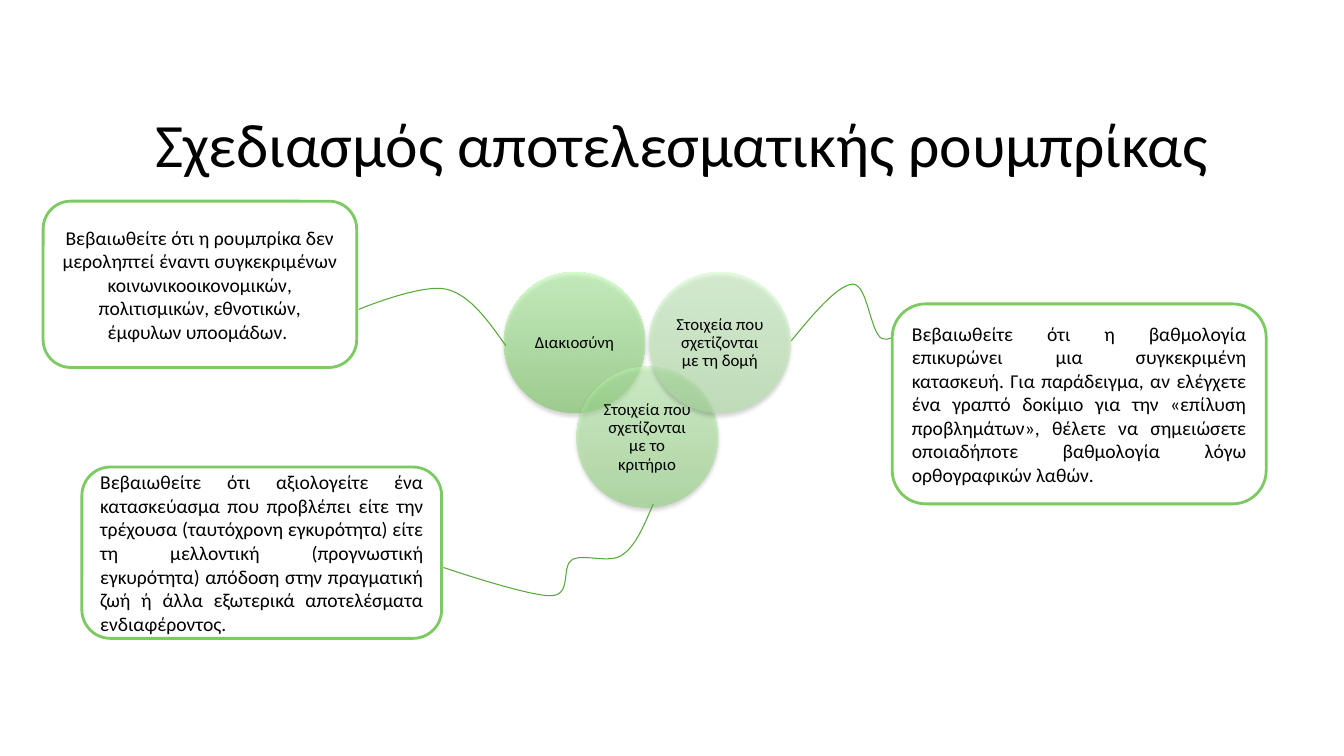
"""Build the slide on designing an effective rubric."""
from dataclasses import dataclass

from lxml.etree import SubElement
from pptx import Presentation
from pptx.dml.color import RGBColor
from pptx.enum.shapes import MSO_SHAPE
from pptx.enum.text import MSO_ANCHOR, MSO_AUTO_SIZE, PP_ALIGN
from pptx.oxml.ns import qn
from pptx.shapes.autoshape import Shape
from pptx.shapes.shapetree import GroupShapes
from pptx.slide import Slide
from pptx.util import Pt

BLACK = RGBColor(0x00, 0x00, 0x00)
WHITE = RGBColor(0xFF, 0xFF, 0xFF)
BORDER = RGBColor(0x7C, 0xCA, 0x62)
CURVE = RGBColor(0x55, 0xA8, 0x39)
FONT = "Calibri"
DIAMETER = 100.8
LABEL_SIZE = 71.3
LABEL_OFFSET = (DIAMETER - LABEL_SIZE) / 2

Point = tuple[float, float]


@dataclass(frozen=True)
class Circle:
    """A translucent circle with its gradient colours."""

    left: float
    top: float
    bottom_color: RGBColor
    top_color: RGBColor
    text: str


@dataclass(frozen=True)
class Note:
    """A rounded box with an explanation."""

    left: float
    top: float
    width: float
    height: float
    align: PP_ALIGN
    text: str


CIRCLES = [
    Circle(360, 194.4, RGBColor(0x69, 0xC5, 0x4B), RGBColor(0xB4, 0xFF, 0xA4),
           "Διακιοσύνη"),
    Circle(411.9, 262, RGBColor(0x8A, 0xD5, 0x75), RGBColor(0xC2, 0xFF, 0xB4),
           "Στοιχεία που σχετίζονται με το κριτήριο"),
    Circle(463.8, 194.4, RGBColor(0xAD, 0xE4, 0xA0), RGBColor(0xD2, 0xFF, 0xC9),
           "Στοιχεία που σχετίζονται με τη δομή"),
]

NOTES = [
    Note(30.8, 143.7, 224, 118.8, PP_ALIGN.CENTER,
         "Βεβαιωθείτε ότι η ρουμπρίκα δεν μεροληπτεί έναντι συγκεκριμένων "
         "κοινωνικοοικονομικών, πολιτισμικών, εθνοτικών, έμφυλων υποομάδων. "),
    Note(58.5, 333.6, 257, 122.4, PP_ALIGN.JUSTIFY,
         "Βεβαιωθείτε ότι αξιολογείτε ένα κατασκεύασμα που προβλέπει είτε την "
         "τρέχουσα (ταυτόχρονη εγκυρότητα) είτε τη μελλοντική (προγνωστική "
         "εγκυρότητα) απόδοση στην πραγματική ζωή ή άλλα εξωτερικά "
         "αποτελέσματα ενδιαφέροντος. "),
    Note(637.3, 217.1, 267.1, 142.8, PP_ALIGN.JUSTIFY,
         "Βεβαιωθείτε ότι η βαθμολογία επικυρώνει μια συγκεκριμένη κατασκευή. "
         "Για παράδειγμα, αν ελέγχετε ένα γραπτό δοκίμιο για την «επίλυση "
         "προβλημάτων», θέλετε να σημειώσετε οποιαδήποτε βαθμολογία λόγω "
         "ορθογραφικών λαθών. "),
]

CURVES: list[list[Point]] = [
    [(565.2, 243.4), (581.8, 223.2), (598.3, 203.8), (609.1, 203),
     (619.9, 203), (621.4, 237.6), (630, 241.9),
     (638.6, 245.5), (651.6, 227.5), (659.5, 228.2),
     (668.2, 229), (681.1, 247), (681.1, 247)],
    [(361.4, 247), (348.5, 229), (336.2, 211), (319, 206.6),
     (301, 202.3), (256.3, 221), (256.3, 221)],
    [(466.6, 360), (460.1, 375.1), (454.3, 389.5), (445, 396),
     (435.6, 403.2), (417.6, 395.3), (409, 399.6),
     (400.3, 404.6), (409, 424.8), (393.8, 425.5),
     (378, 426.2), (316.8, 405.4), (316.8, 405.4)],
]


def write(s: Shape, text: str, size: float, align: PP_ALIGN,
          spacing: float = 1.0, inset: Point = (7.2, 3.6)) -> None:
    """Put one formatted paragraph in a shape."""
    tf = s.text_frame
    frame = {"word_wrap": True, "auto_size": MSO_AUTO_SIZE.NONE,
             "vertical_anchor": MSO_ANCHOR.MIDDLE,
             "margin_left": Pt(inset[0]), "margin_right": Pt(inset[0]),
             "margin_top": Pt(inset[1]), "margin_bottom": Pt(inset[1])}
    for name, value in frame.items():
        setattr(tf, name, value)
    p = tf.paragraphs[0]
    for name, value in {"alignment": align, "line_spacing": spacing}.items():
        setattr(p, name, value)
    r = p.add_run()
    r.text = text
    for name, value in {"name": FONT, "size": Pt(size)}.items():
        setattr(r.font, name, value)
    r.font.color.rgb = BLACK


def add_title(slide: Slide, text: str) -> None:
    """Place and fill the title placeholder."""
    s = slide.shapes.title
    box = {"left": 73.4, "top": 56.9, "width": 828, "height": 97.2}
    for name, value in box.items():
        setattr(s, name, Pt(value))
    write(s, text, 44, PP_ALIGN.CENTER, 0.9)


def add_circle(shapes: GroupShapes, circle: Circle) -> None:
    """Draw a translucent gradient circle with a soft shadow and a label."""
    s = shapes.add_shape(MSO_SHAPE.OVAL, Pt(circle.left), Pt(circle.top),
                         Pt(DIAMETER), Pt(DIAMETER))
    s.fill.gradient()
    s.fill.gradient_angle = 90
    colors = (circle.bottom_color, circle.top_color)
    for stop, color, position in zip(s.fill.gradient_stops, colors, (0, 1)):
        stop.color.rgb = color
        stop.position = position
    properties = s._element.spPr
    for color in list(properties.iter(qn("a:srgbClr"))):
        SubElement(color, qn("a:alpha"), val="50000")
    s.line.fill.background()
    s.shadow.inherit = False
    shadow = SubElement(properties.find(qn("a:effectLst")), qn("a:outerShdw"),
                        blurRad=str(Pt(3.1)), dist=str(Pt(1.8)),
                        dir="5400000", rotWithShape="0")
    color = SubElement(shadow, qn("a:srgbClr"), val=str(BLACK))
    SubElement(color, qn("a:alpha"), val="35000")
    label = shapes.add_textbox(Pt(circle.left + LABEL_OFFSET),
                               Pt(circle.top + LABEL_OFFSET),
                               Pt(LABEL_SIZE), Pt(LABEL_SIZE))
    write(label, circle.text, 12, PP_ALIGN.CENTER, 0.9, (3.6, 3.6))


def add_curve(slide: Slide, knots: list[Point]) -> None:
    """Draw an open line through chained cubic segments."""
    (x, y), *points = [(Pt(x), Pt(y)) for x, y in knots]
    builder = slide.shapes.build_freeform(x, y)
    builder.add_line_segments(points, close=False)
    s = builder.convert_to_shape()
    segments = list(s._element.spPr.iter(qn("a:lnTo")))
    outline = segments[0].getparent()
    for i in range(0, len(segments), 3):
        cubic = SubElement(outline, qn("a:cubicBezTo"))
        for segment in segments[i:i + 3]:
            cubic.append(segment[0])
            outline.remove(segment)
    s.fill.background()
    s.line.color.rgb = CURVE
    s.line.width = Pt(0.75)
    s.shadow.inherit = False


def add_note(slide: Slide, note: Note) -> None:
    """Draw a white rounded box with green border and text."""
    s = slide.shapes.add_shape(MSO_SHAPE.ROUNDED_RECTANGLE, Pt(note.left),
                               Pt(note.top), Pt(note.width), Pt(note.height))
    s.fill.solid()
    s.fill.fore_color.rgb = WHITE
    s.line.color.rgb = BORDER
    s.line.width = Pt(2)
    s.shadow.inherit = False
    write(s, note.text, 14, note.align)


def main() -> None:
    """Assemble and save the presentation."""
    prs = Presentation()
    prs.slide_width, prs.slide_height = Pt(960), Pt(540)
    slide = prs.slides.add_slide(prs.slide_layouts[5])
    add_title(slide, "Σχεδιασμός αποτελεσματικής ρουμπρίκας")
    venn = slide.shapes.add_group_shape()
    for circle in CIRCLES:
        add_circle(venn.shapes, circle)
    for knots in CURVES:
        add_curve(slide, knots)
    for note in NOTES:
        add_note(slide, note)
    prs.save("out.pptx")


if __name__ == "__main__":
    main()
